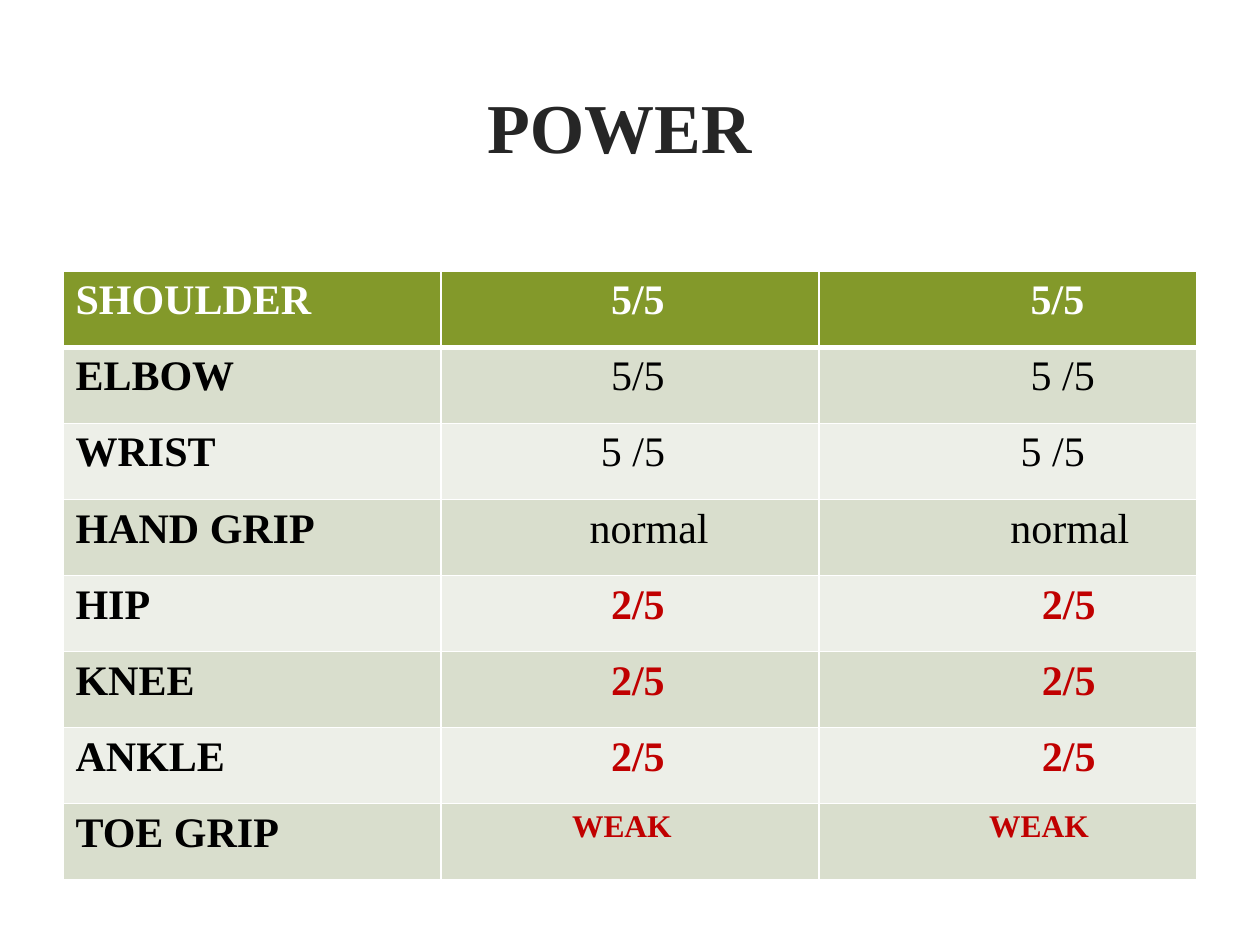
from dataclasses import dataclass

from lxml import etree
from pptx import Presentation
from pptx.dml.color import RGBColor
from pptx.enum.text import MSO_ANCHOR, PP_ALIGN
from pptx.oxml.ns import qn
from pptx.util import Inches, Pt

CENTER = PP_ALIGN.CENTER
MIDDLE = MSO_ANCHOR.MIDDLE


@dataclass(frozen=True)
class Theme:
    font: str = "Times New Roman"
    title: str = "262626"
    header: str = "83992A"
    bands: tuple = ("D9DECD", "EDEFE8")
    light: str = "FFFFFF"
    dark: str = "000000"
    alert: str = "C00000"
    title_size: int = 40
    body_size: int = 24
    small_size: int = 18
    rule: int = 1
    header_rule: int = 3


THEME = Theme()
SLIDE_W, SLIDE_H = Inches(10), Inches(7.5)
TITLE_BOX = (0.136, 0.048, 0.711, 0.17)  # shares of the slide's size
TABLE_BOX = (0.05, 0.287, 0.9, 0.644)
CELL_MARGIN = 0.1

# Joint, then the two gradings, each with its indent in inches
POWER = [
    ("SHOULDER", ("5/5", 1.25), ("5/5", 1.58)),
    ("ELBOW", ("5/5", 1.25), ("5 /5", 1.58)),
    ("WRIST", ("5 /5", 1.17), ("5 /5", 1.5)),
    ("HAND GRIP", ("normal", 1.08), ("normal", 1.42)),
    ("HIP", ("2/5", 1.25), ("2/5", 1.67)),
    ("KNEE", ("2/5", 1.25), ("2/5", 1.67)),
    ("ANKLE", ("2/5", 1.25), ("2/5", 1.67)),
    ("TOE GRIP", ("WEAK", 0.94), ("WEAK", 1.25)),
]
REDUCED = ("2/5", "WEAK")


def to_slide(box):
    x, y, w, h = box
    return (int(x * SLIDE_W), int(y * SLIDE_H),
            int(w * SLIDE_W), int(h * SLIDE_H))


def format_text(p, size, color, bold):
    for r in p.runs:
        r.font.name = THEME.font
        r.font.size = Pt(size)
        r.font.bold = bold
        r.font.color.rgb = RGBColor.from_string(color)


def set_borders(cell, **widths):
    """Draw the cell's sides, named L, R, T and B, in points."""
    tc_pr = cell._tc.get_or_add_tcPr()
    for side in "LRTB":
        width = widths.get(side, THEME.rule)
        ln = etree.SubElement(tc_pr, qn(f"a:ln{side}"), w=str(Pt(width)))
        fill = etree.SubElement(ln, qn("a:solidFill"))
        etree.SubElement(fill, qn("a:srgbClr"), val=THEME.light)


def add_title(s, box, text):
    sp = s.shapes.title
    sp.left, sp.top, sp.width, sp.height = to_slide(box)
    tf = sp.text_frame
    tf.text = text
    tf.vertical_anchor = MIDDLE
    p = tf.paragraphs[0]
    p.alignment = CENTER
    format_text(p, THEME.title_size, THEME.title, True)


def fill_cell(cell, row, text, indent, is_label):
    header, reduced = row == 0, text in REDUCED
    if header:
        set_borders(cell, B=THEME.header_rule)
    elif row == 1:
        set_borders(cell, T=THEME.header_rule)
    else:
        set_borders(cell)
    cell.fill.solid()
    fill = THEME.header if header else THEME.bands[(row - 1) % 2]
    cell.fill.fore_color.rgb = RGBColor.from_string(fill)
    cell.margin_left = Inches(CELL_MARGIN + indent)
    cell.text_frame.text = text
    color = THEME.light if header else THEME.alert if reduced else THEME.dark
    size = THEME.small_size if text == "WEAK" else THEME.body_size
    format_text(cell.text_frame.paragraphs[0], size, color,
                header or is_label or reduced)


def add_power_table(s, box, rows):
    table = s.shapes.add_table(len(rows), len(rows[0]), *to_slide(box)).table
    for i, (joint, *grades) in enumerate(rows):
        for j, (text, indent) in enumerate([(joint, 0), *grades]):
            fill_cell(table.cell(i, j), i, text, indent, j == 0)


def main():
    prs = Presentation()
    prs.slide_width, prs.slide_height = SLIDE_W, SLIDE_H
    s = prs.slides.add_slide(prs.slide_layouts.get_by_name("Title Only"))
    add_title(s, TITLE_BOX, "POWER")
    add_power_table(s, TABLE_BOX, POWER)
    prs.save("out.pptx")


if __name__ == "__main__":
    main()
